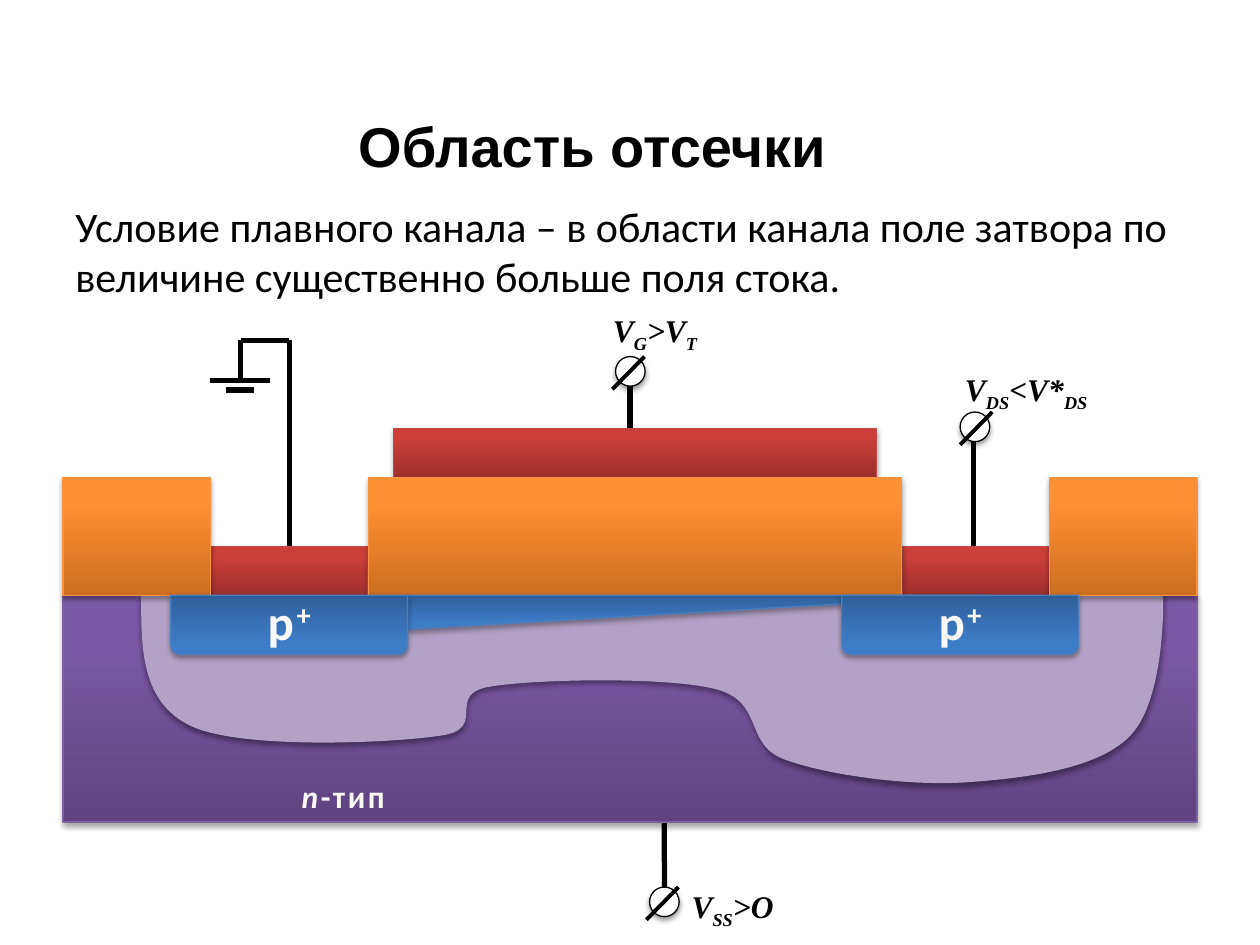
from lxml import etree
from pptx import Presentation, util as u
from pptx.dml.color import RGBColor
from pptx.enum import shapes, text
from pptx.oxml.ns import qn

COLORS = {
    "black": "000000", "white": "FFFFFF", "pale": "F8F8F8", "depletion": "B3A2C7",
    "metal_dark": "9C2F2D", "metal": "CB3E3A", "metal_edge": "BF4C48",
    "oxide_dark": "CC6E20", "oxide": "FF9034", "oxide_edge": "F69240",
    "bulk_dark": "5F4480", "bulk": "7B58A6", "bulk_edge": "7D60A0",
    "doped_dark": "2F5F99", "doped": "3D7CC7", "doped_edge": "4B7EBC",
}
COLUMNS, ROWS = 100, 75
CELL = u.Inches(10) // COLUMNS
SURFACE = 47.25  # row where the crystal meets the oxide

DEPLETION_START = (11.2, 47.3)
DEPLETION_CURVES = [
    ((11.2, 51.5), (11.2, 55.7), (15.1, 57.6)),
    ((19, 59.5), (30.9, 59), (34.9, 58.4)),
    ((38.9, 57.9), (35.2, 55.1), (38.9, 54.5)),
    ((42.5, 53.9), (52.9, 53.7), (56.8, 54.7)),
    ((60.7, 55.7), (59, 59.1), (62.3, 60.3)),
    ((65.6, 61.5), (72, 62.4), (76.6, 62.1)),
    ((81.1, 61.8), (87, 61.1), (89.6, 58.5)),
    ((92.2, 56), (92.4, 49.1), (92.3, 46.8)),
    ((92.2, 44.4), (89, 44.5), (89, 44.5)),
]


def color(name):
    return RGBColor.from_string(COLORS[name])


def grid(*cells):
    return [u.Emu(round(cell * CELL)) for cell in cells]


def bend_segments(shape, curves):
    """Turn each straight segment of a freeform into a cubic Bezier curve."""
    segments = list(shape._element.iter(qn("a:lnTo")))
    for segment, curve in zip(segments, curves):
        bend = etree.Element(qn("a:cubicBezTo"))
        for point in curve:
            x, y = grid(*point)
            etree.SubElement(bend, qn("a:pt"), x=str(x - shape.left), y=str(y - shape.top))
        segment.getparent().replace(segment, bend)


def add_span(para, words, font="Calibri", size=18, fill="black", bold=False,
             italic=False, spacing=0, baseline=0):
    span = para.add_run()
    span.text = words
    span.font.name, span.font.size = font, u.Pt(size)
    span.font.bold, span.font.italic = bold, italic
    span.font.color.rgb = color(fill)
    properties = span.font._element
    if spacing:
        properties.set("spc", str(round(spacing * 100)))
    if baseline:
        properties.set("baseline", str(baseline * 1000))


class Diagram:
    def __init__(self, deck):
        self.slide = deck.slides.add_slide(deck.slide_layouts[6])
        self.shapes = self.slide.shapes

    def shadow(self, shape, opacity):
        shape.shadow.inherit = False
        effects = shape._element.spPr.find(qn("a:effectLst"))
        outer = etree.SubElement(effects, qn("a:outerShdw"), blurRad=str(u.Pt(3.1)),
                                 dist=str(u.Pt(1.8)), dir="5400000", rotWithShape="0")
        tint = etree.SubElement(outer, qn("a:srgbClr"), val=COLORS["black"])
        etree.SubElement(tint, qn("a:alpha"), val=str(opacity * 1000))

    def layer(self, material, left, top, width, height,
              kind=shapes.MSO_SHAPE.RECTANGLE, rotation=0):
        """Add a part shaded from its material's dark colour to its light one."""
        shape = self.shapes.add_shape(kind, *grid(left, top, width, height))
        shape.rotation = rotation
        shape.fill.gradient()
        shape.fill.gradient_angle = 90
        for stop, name, position in zip(shape.fill.gradient_stops,
                                        (material + "_dark", material), (0, 0.8)):
            stop.color.rgb, stop.position = color(name), position
        shape.line.color.rgb = color(material + "_edge")
        shape.line.width = u.Pt(0.75)
        self.shadow(shape, 35)
        return shape

    def depletion(self):
        builder = self.shapes.build_freeform(*grid(*DEPLETION_START), scale=1.0)
        builder.add_line_segments([grid(*curve[-1]) for curve in DEPLETION_CURVES],
                                  close=False)
        shape = builder.convert_to_shape()
        bend_segments(shape, DEPLETION_CURVES)
        shape.fill.solid()
        shape.fill.fore_color.rgb = color("depletion")
        shape.line.fill.background()
        self.shadow(shape, 38)

    def wire(self, start, end, width=3):
        line = self.shapes.add_connector(shapes.MSO_CONNECTOR.STRAIGHT,
                                         *grid(*start, *end))
        line.line.color.rgb = color("black")
        line.line.width = u.Pt(width)
        etree.SubElement(line._element.spPr, qn("a:effectLst"))
        return line

    def terminal(self, left, top, slash_left):
        """Add a circle crossed by a slash."""
        circle = self.shapes.add_shape(shapes.MSO_SHAPE.OVAL, *grid(left, top, 2.35, 2.35))
        circle.fill.solid()
        circle.fill.fore_color.rgb = color("white")
        circle.line.color.rgb = color("black")
        circle.line.width = u.Pt(0.75)
        self.shadow(circle, 38)
        self.wire((slash_left, top + 2.6), (slash_left + 2.55, top), 2.25)

    def words(self, left, top, width, height, spans, wrap=True, grow=True,
              align=text.PP_ALIGN.LEFT, **style):
        """Add a text box; each span is its words and what differs from the style."""
        box = self.shapes.add_textbox(*grid(left, top, width, height))
        box.text_frame.word_wrap = wrap
        if grow:
            box.text_frame.auto_size = text.MSO_AUTO_SIZE.SHAPE_TO_FIT_TEXT
        para = box.text_frame.paragraphs[0]
        para.alignment = align
        for part, changes in spans:
            add_span(para, part, **{**style, **changes})


def main():
    deck = Presentation()
    deck.slide_width, deck.slide_height = grid(COLUMNS, ROWS)
    diagram = Diagram(deck)
    low = {"baseline": -25}

    # Crystal with its lead behind it
    diagram.wire((52.7, 62.5), (52.75, 72))
    diagram.layer("bulk", 5, SURFACE, 90, 18)
    diagram.depletion()

    diagram.words(5, 15.4, 90, 54.6, [(
        "Условие плавного канала – в области канала поле затвора по величине "
        "существенно больше поля стока.", {})], grow=False, size=24)

    # Leads of source, gate and drain
    source_lead = diagram.wire((22.95, 27), (22.95, 43.4))
    diagram.wire((50, 29.9), (50, 35.4))
    diagram.wire((77.25, 34), (77.25, 43.4))

    # Contacts, gate and oxide
    source = diagram.layer("metal", 16.7, 43.4, 12.5, 3.85)
    source_lead.end_connect(source, 0)
    diagram.layer("metal", 71.6, 43.4, 11.7, 3.85)
    diagram.layer("metal", 31.25, 34, 38.3, 3.9)
    for left, width in ((5, 11.7), (83.3, 11.7), (29.25, 42.3)):
        diagram.layer("oxide", left, 37.9, width, SURFACE - 37.9)

    diagram.words(22.95, 61.2, 15.6, 4, [("n", {"italic": True}), ("-тип", {})],
                  fill="pale", bold=True, spacing=1.5)

    # Ground
    for start, end in (((22.95, 27), (19.1, 27)), ((19.1, 27), (19.1, 30)),
                       ((16.7, 30.2), (21.4, 30.2)), ((17.9, 30.95), (20.2, 30.95))):
        diagram.wire(start, end)

    for left, top, slash_left in ((48.85, 28.3, 48.6), (76.2, 32.7, 76.2),
                                  (51.55, 70.4, 51.3)):
        diagram.terminal(left, top, slash_left)
    for left, top, width, spans in (
        (47.65, 24.2, 10.9, [("V", {}), ("G", low), (">V", {}), ("T", low)]),
        (75.6, 28.9, 12.7, [("V", {}), ("DS", low), ("<V*", {}), ("DS", low)]),
        (53.9, 69.9, 9.4, [("V", {}), ("SS", low), (">O", {})]),
    ):
        diagram.words(left, top, width, 4, spans, font="Times New Roman",
                      bold=True, italic=True)

    # Channel and doped regions
    channel = diagram.layer("doped", 32.3, SURFACE, 46.1, 2.7,
                            shapes.MSO_SHAPE.RIGHT_TRIANGLE, 180)
    channel._element.spPr.find(qn("a:xfrm")).set("flipH", "1")
    doped_lefts = (66.8, 13.55)
    for left in doped_lefts:
        diagram.layer("doped", left, SURFACE, 18.8, 4.7,
                      shapes.MSO_SHAPE.ROUND_2_SAME_RECTANGLE, 180)
    for left in doped_lefts:
        diagram.words(left + 3.15, 46.45, 12.5, 5.7, [("p", {}), ("+", {"baseline": 30})],
                      align=text.PP_ALIGN.CENTER, size=28, fill="pale", bold=True,
                      spacing=1.5)

    diagram.words(27.45, 8.35, 39.4, 6.4, [("Область отсечки", {})], wrap=False,
                  font="Arial", size=32, bold=True)

    deck.save("out.pptx")


if __name__ == "__main__":
    main()
